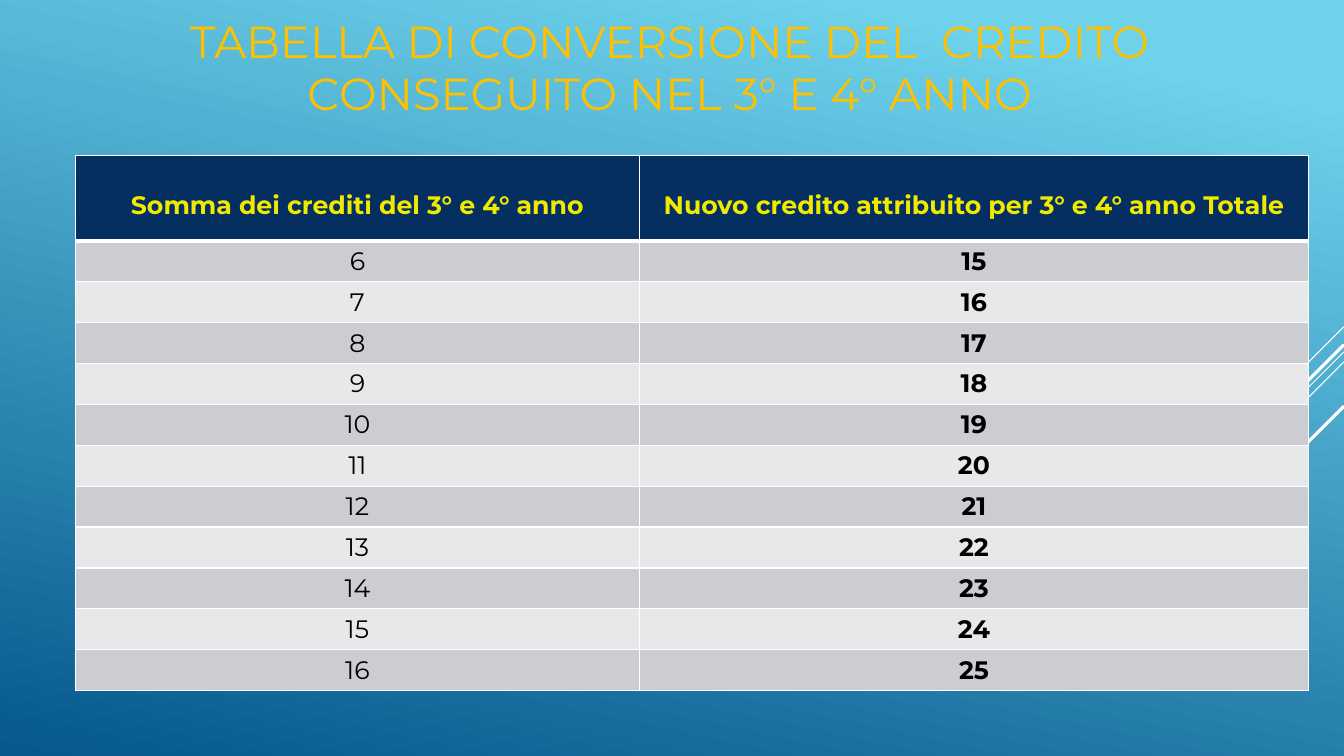
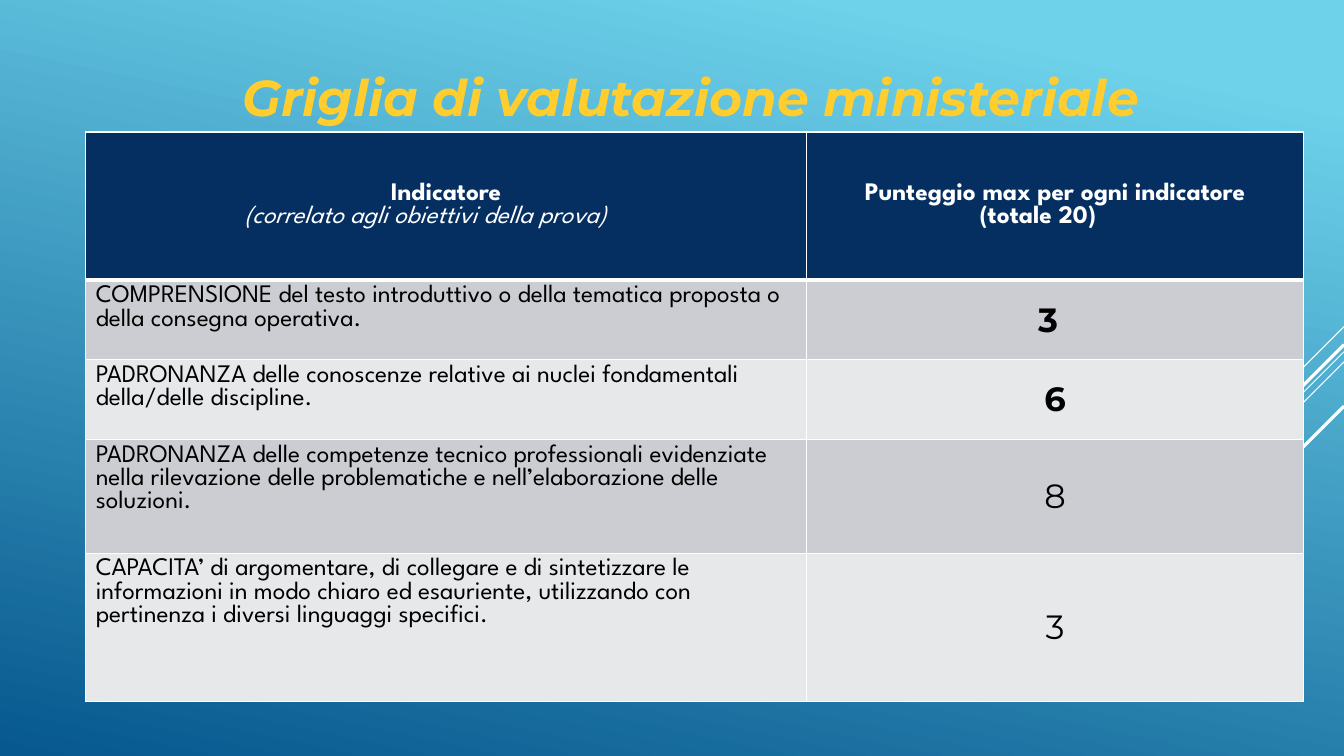
from collections.abc import Sequence
from dataclasses import dataclass, field

from lxml.etree import SubElement
from pptx import Presentation
from pptx.dml.color import RGBColor
from pptx.enum.shapes import MSO_CONNECTOR as Connector
from pptx.enum.text import MSO_ANCHOR as Anchor
from pptx.enum.text import MSO_AUTO_SIZE as AutoSize
from pptx.enum.text import PP_ALIGN as Align
from pptx.oxml import parse_xml
from pptx.oxml.ns import nsdecls, qn
from pptx.slide import Slide, SlideMaster
from pptx.table import _Cell as TableCell
from pptx.text.text import _Paragraph as Paragraph
from pptx.util import Inches, Pt


@dataclass(frozen=True)
class Theme:
    sky: str = "6ED2EB"
    ocean: str = "06588E"
    white: str = "FFFFFF"
    black: str = "000000"
    navy: str = "052F61"
    amber: str = "FFC000"
    gold: str = "FFCD2D"
    yellow: str = "F0EA00"
    bands: tuple[str, str] = ("CCCDD2", "E7E8EA")
    sans: str = "Montserrat"
    geometric: str = "League Spartan"
    body_size: int = 18
    score_size: int = 24
    title_size: int = 32
    large_title_size: int = 36
    border: float = 1
    header_rule: float = 3


THEME = Theme()


@dataclass(frozen=True)
class Box:
    left: float
    top: float
    width: float
    height: float

    def lengths(self) -> tuple[int, int, int, int]:
        return Inches(self.left), Inches(self.top), Inches(self.width), Inches(self.height)


@dataclass(frozen=True)
class TextStyle:
    size: int
    color: str
    font: str = THEME.sans
    bold: bool = False
    italic: bool = False

    def format_values(self) -> dict:
        return {"name": self.font, "size": Pt(self.size), "bold": self.bold, "italic": self.italic}


@dataclass(frozen=True)
class Line:
    text: str
    style: TextStyle


@dataclass(frozen=True)
class CellContent:
    lines: Sequence[Line]
    align: Align = Align.CENTER
    format_values: dict = field(default_factory=dict)


@dataclass(frozen=True)
class TitleContent:
    line: Line
    box: Box
    line_spacing: float = 1.0


@dataclass(frozen=True)
class TableContent:
    box: Box
    column_widths: Sequence[float]
    row_heights: Sequence[float]
    rows: Sequence[Sequence[CellContent]]


@dataclass(frozen=True)
class Ray:
    """A diagonal falling from the right edge of the slide."""
    top: float
    run: float
    weight: float


SLIDE_WIDTH, SLIDE_HEIGHT = 13.33, 7.5
RAYS = (
    Ray(3.24, 1.0, 0.75),
    Ray(3.49, 3.26, 0.75),
    Ray(3.59, 2.07, 0.75),
    Ray(3.42, 1.91, 2.25),
    Ray(4.03, 1.39, 2.25),
)

CREDIT_HEADER = TextStyle(THEME.body_size, THEME.yellow, bold=True)
OLD_CREDIT = TextStyle(THEME.body_size, THEME.black)
NEW_CREDIT = TextStyle(THEME.body_size, THEME.black, bold=True)
GRID_HEADER = TextStyle(THEME.body_size, THEME.white, THEME.geometric, bold=True)
GRID_NOTE = TextStyle(THEME.body_size, THEME.white, THEME.geometric, italic=True)
INDICATOR = TextStyle(THEME.body_size, THEME.black, THEME.geometric)
SCORE = TextStyle(THEME.score_size, THEME.black)
BOLD_SCORE = TextStyle(THEME.score_size, THEME.black, bold=True)

MIDDLE = {"vertical_anchor": Anchor.MIDDLE}
LOWERED = {"margin_top": Inches(0.35)}
SHIFTED_LEFT = MIDDLE | {"margin_right": Inches(0.24)}


def set_attributes(target: object, values: dict) -> None:
    for name, value in values.items():
        setattr(target, name, value)


def write_line(paragraph: Paragraph, line: Line, align: Align) -> None:
    paragraph.alignment = align
    run = paragraph.add_run()
    run.text = line.text
    set_attributes(run.font, line.style.format_values())
    run.font.color.rgb = RGBColor.from_string(line.style.color)


def paint_background(master: SlideMaster) -> None:
    fill = master.background.fill
    fill.gradient()
    fill.gradient_angle = 360 - 102
    stops = ((0.1, THEME.sky), (1.0, THEME.ocean))
    for stop, (position, color) in zip(fill.gradient_stops, stops):
        stop.position = position
        stop.color.rgb = RGBColor.from_string(color)


def move_rays_to_master(slide: Slide, master: SlideMaster) -> None:
    """Draw the rays on a slide, then hand them to the master all slides share."""
    for ray in RAYS:
        connector = slide.shapes.add_connector(
            Connector.STRAIGHT, Inches(SLIDE_WIDTH), Inches(ray.top),
            Inches(SLIDE_WIDTH - ray.run), Inches(ray.top + ray.run))
        connector.line.color.rgb = RGBColor.from_string(THEME.white)
        connector.line.width = Pt(ray.weight)
        SubElement(connector.element.spPr, qn("a:effectLst"))
        master.shapes.element.append(connector.element)


def add_title(slide: Slide, content: TitleContent) -> None:
    title = slide.shapes.title
    names = ("left", "top", "width", "height")
    set_attributes(title, dict(zip(names, content.box.lengths())))
    set_attributes(title.text_frame, {
        "word_wrap": True, "auto_size": AutoSize.NONE, "vertical_anchor": Anchor.BOTTOM})
    paragraph = title.text_frame.paragraphs[0]
    paragraph.line_spacing = content.line_spacing
    write_line(paragraph, content.line, Align.CENTER)


def set_borders(cell: TableCell, top: float, bottom: float) -> None:
    properties = cell._tc.get_or_add_tcPr()
    widths = {"lnL": THEME.border, "lnR": THEME.border, "lnT": top, "lnB": bottom}
    for index, (side, width) in enumerate(widths.items()):
        properties.insert(index, parse_xml(
            f'<a:{side} {nsdecls("a")} w="{Pt(width)}"><a:solidFill>'
            f'<a:srgbClr val="{THEME.white}"/></a:solidFill></a:{side}>'))


def fill_cell(cell: TableCell, content: CellContent, row: int) -> None:
    color = THEME.bands[(row - 1) % 2] if row else THEME.navy
    cell.fill.solid()
    cell.fill.fore_color.rgb = RGBColor.from_string(color)
    set_attributes(cell, content.format_values)
    for index, line in enumerate(content.lines):
        frame = cell.text_frame
        paragraph = frame.add_paragraph() if index else frame.paragraphs[0]
        write_line(paragraph, line, content.align)
    set_borders(cell,
                top=THEME.header_rule if row == 1 else THEME.border,
                bottom=THEME.header_rule if row == 0 else THEME.border)


def add_table(slide: Slide, content: TableContent) -> None:
    table = slide.shapes.add_table(
        len(content.rows), len(content.column_widths), *content.box.lengths()).table
    for column, width in zip(table.columns, content.column_widths):
        column.width = Inches(width)
    for table_row, height in zip(table.rows, content.row_heights):
        table_row.height = Inches(height)
    for row, cells in enumerate(content.rows):
        for column, cell_content in enumerate(cells):
            fill_cell(table.cell(row, column), cell_content, row)


def credit_table() -> TableContent:
    box = Box(0.75, 1.54, 12.23, 5.31)
    header_height = 0.85
    old_credits = range(6, 17)
    headers = ("Somma dei crediti del 3° e 4° anno",
               "Nuovo credito attribuito per 3° e 4° anno Totale")
    rows = [[CellContent([Line(text, CREDIT_HEADER)], format_values=LOWERED) for text in headers]]
    for credit in old_credits:
        rows.append([CellContent([Line(str(credit), OLD_CREDIT)]),
                     CellContent([Line(str(credit + 9), NEW_CREDIT)])])
    row_height = (box.height - header_height) / len(old_credits)
    heights = [header_height] + [row_height] * len(old_credits)
    return TableContent(box, (5.59, 6.64), heights, rows)


def grid_table() -> TableContent:
    header = [
        CellContent([Line("Indicatore", GRID_HEADER),
                     Line("(correlato agli obiettivi della prova) \t", GRID_NOTE)],
                    format_values=MIDDLE),
        CellContent([Line("Punteggio max per ogni indicatore", GRID_HEADER),
                     Line("(totale 20) \t", GRID_HEADER)],
                    format_values=MIDDLE),
    ]
    indicators = (
        ("COMPRENSIONE del testo introduttivo o della tematica proposta o della consegna "
         "operativa.", "3", BOLD_SCORE, SHIFTED_LEFT),
        ("PADRONANZA delle conoscenze relative ai nuclei fondamentali della/delle discipline.",
         "6", BOLD_SCORE, MIDDLE),
        ("PADRONANZA delle competenze tecnico professionali evidenziate nella rilevazione "
         "delle problematiche e nell’elaborazione delle soluzioni.", "8", SCORE, MIDDLE),
        ("CAPACITA’ di argomentare, di collegare e di sintetizzare le informazioni in modo "
         "chiaro ed esauriente, utilizzando con pertinenza i diversi linguaggi specifici.",
         "3", SCORE, MIDDLE),
    )
    rows = [header]
    for text, score, style, placement in indicators:
        rows.append([CellContent([Line(text, INDICATOR)], Align.LEFT),
                     CellContent([Line(score, style)], format_values=placement)])
    return TableContent(Box(0.85, 1.31, 12.08, 5.65), (7.15, 4.93),
                        (1.47, 0.79, 0.79, 1.13, 1.47), rows)


def main() -> None:
    presentation = Presentation()
    presentation.slide_width = Inches(SLIDE_WIDTH)
    presentation.slide_height = Inches(SLIDE_HEIGHT)
    master = presentation.slide_master
    title_only = presentation.slide_layouts.get_by_name("Title Only")

    credit_title = TitleContent(
        Line("TABELLA DI CONVERSIONE DEL  CREDITO CONSEGUITO NEL 3° E 4° ANNO",
             TextStyle(THEME.title_size, THEME.amber)),
        Box(0.31, 0.21, 12.67, 1.04), line_spacing=0.97)
    grid_title = TitleContent(
        Line("Griglia di valutazione ministeriale",
             TextStyle(THEME.large_title_size, THEME.gold, bold=True, italic=True)),
        Box(0.75, 0.6, 12.2, 0.71))

    paint_background(master)
    for title, table in ((credit_title, credit_table()), (grid_title, grid_table())):
        slide = presentation.slides.add_slide(title_only)
        add_title(slide, title)
        add_table(slide, table)
    move_rays_to_master(slide, master)
    presentation.save("out.pptx")


if __name__ == "__main__":
    main()
